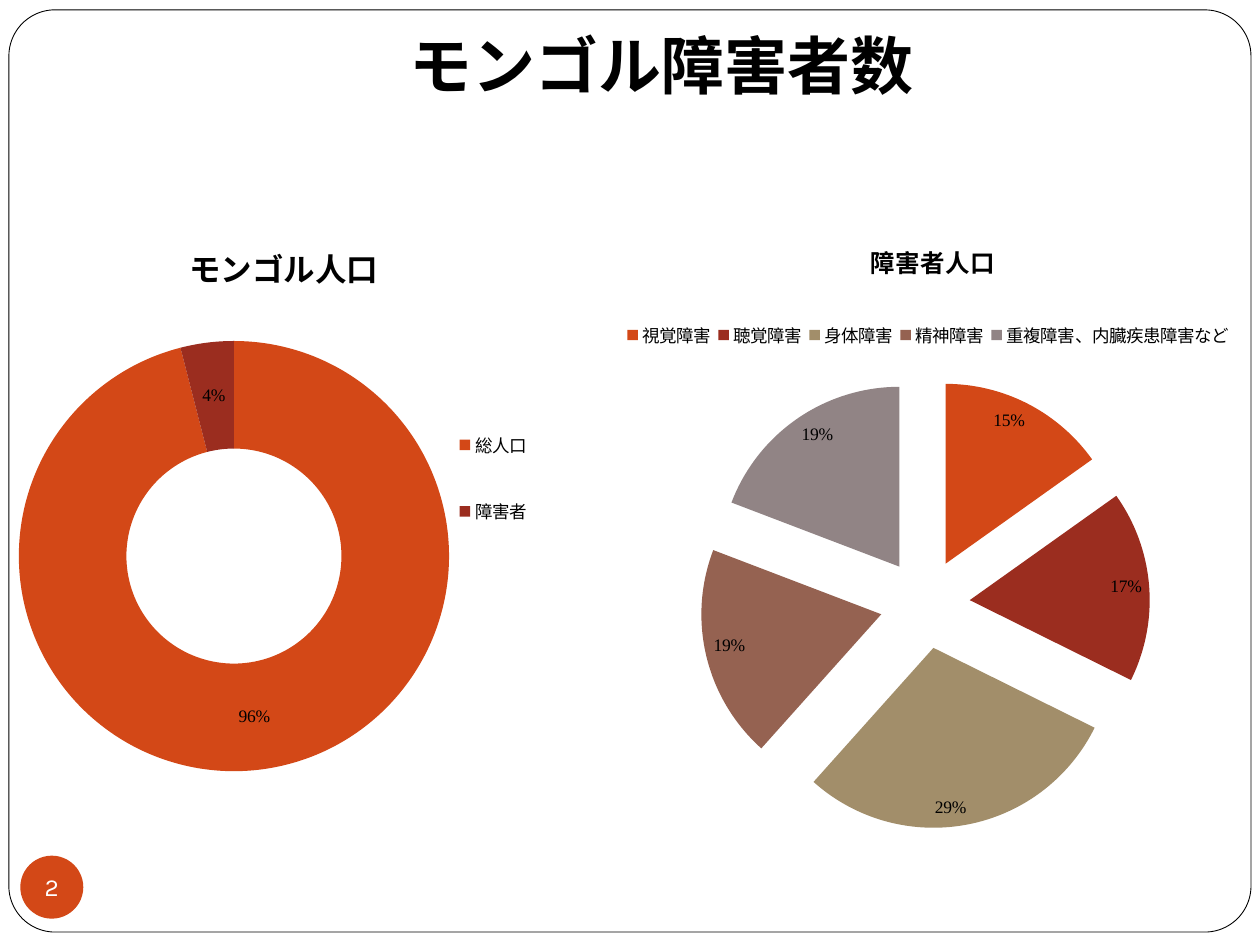
"""Build the slide on the number of people with disabilities in Mongolia."""
from lxml import etree
from pptx import Presentation
from pptx import util as u
from pptx.chart.data import CategoryChartData
from pptx.dml.color import RGBColor
from pptx.enum import chart as charts, shapes, text
from pptx.oxml.ns import qn


def color(value):
    return RGBColor.from_string(value)


def place(element, index, **fractions):
    for old in element.findall(qn("c:layout")):
        element.remove(old)
    layout = etree.Element(qn("c:layout"))
    manual = etree.SubElement(layout, qn("c:manualLayout"))
    if "w" in fractions and element.tag == qn("c:plotArea"):
        etree.SubElement(manual, qn("c:layoutTarget"), val="inner")
    for mode in ("xMode", "yMode"):
        etree.SubElement(manual, qn(f"c:{mode}"), val="edge")
    for name, value in fractions.items():
        etree.SubElement(manual, qn(f"c:{name}"), val=str(value))
    element.insert(index, layout)


presentation = Presentation()
presentation.slide_width = u.Cm(25.4)
presentation.slide_height = u.Cm(19.05)
slide = presentation.slides.add_slide(presentation.slide_layouts[5])

frame = slide.shapes.add_shape(
    shapes.MSO_SHAPE.ROUNDED_RECTANGLE, u.Cm(0.18), u.Cm(0.2), u.Cm(25.04), u.Cm(18.59))
frame.adjustments[0] = 0.05
frame.shadow.inherit = False
frame.fill.solid()
frame.fill.fore_color.rgb = color("FFFFFF")
frame.line.color.rgb = color("000000")
frame.line.width = u.Pt(0.5)
slide.shapes._spTree.insert(2, frame._element)

title = slide.shapes.title
title.left, title.top, title.width, title.height = u.Cm(2.54), u.Cm(0.76), u.Cm(21.59), u.Cm(3.18)
title.text_frame.text = "モンゴル障害者数"
title.text_frame.vertical_anchor = text.MSO_ANCHOR.TOP
title.text_frame.margin_top = 0
paragraph = title.text_frame.paragraphs[0]
paragraph.alignment = text.PP_ALIGN.CENTER
paragraph.line_spacing = 0.85
paragraph.font.name = "Karla"
paragraph.font.size = u.Pt(36)
paragraph.font.bold = True
paragraph.font.color.rgb = color("000000")

palette = ["D34817", "9B2D1F", "A28E6A", "956251", "918485"]
chart_specs = [
    dict(kind=charts.XL_CHART_TYPE.DOUGHNUT, name="モンゴル人口", size=18,
         box=(0, 4.11, 11.23, 12.57), values={"総人口": 96, "障害者": 4},
         legend=charts.XL_LEGEND_POSITION.RIGHT,
         title_at=dict(x=0.33, y=0.05),
         legend_at=dict(x=0.81, y=0.3, w=0.15, h=0.28),
         plot_at=dict(x=0.03, y=0.22, w=0.78, h=0.69)),
    dict(kind=charts.XL_CHART_TYPE.PIE, name="障害者人口", size=14,
         box=(12.5, 4.11, 12.42, 12.9),
         values={"視覚障害": 15, "聴覚障害": 17, "身体障害": 29, "精神障害": 19,
                 "重複障害、内臓疾患障害など": 19},
         legend=charts.XL_LEGEND_POSITION.TOP,
         title_at=dict(x=0.4, y=0.05),
         legend_at=dict(x=0.0, y=0.18, w=1.0, h=0.05),
         plot_at=dict(x=0.13, y=0.27, w=0.73, h=0.71)),
]
for spec in chart_specs:
    data = CategoryChartData()
    data.categories = list(spec["values"])
    data.add_series(spec["name"], list(spec["values"].values()))
    chart = slide.shapes.add_chart(spec["kind"], *map(u.Cm, spec["box"]), data).chart
    chart.font.name = "Times New Roman"
    chart.font.size = u.Pt(10)
    chart.font.color.rgb = color("000000")

    chart.has_title = True
    chart.chart_title.text_frame.text = spec["name"]
    font = chart.chart_title.text_frame.paragraphs[0].font
    font.name = "Times New Roman"
    font.size = u.Pt(spec["size"])
    font.bold = True
    font.color.rgb = color("000000")
    chart.has_legend = True
    chart.legend.position = spec["legend"]
    chart.legend.include_in_layout = False
    place(chart.chart_title._element, 1, **spec["title_at"])
    place(chart.legend._element, 1, **spec["legend_at"])
    place(chart._chartSpace.chart.plotArea, 0, **spec["plot_at"])

    plot = chart.plots[0]
    plot.vary_by_categories = True
    plot.has_data_labels = True
    labels = plot.data_labels
    labels.show_percentage = True
    labels.show_value = False
    labels.number_format = "0%"
    labels.number_format_is_linked = False
    series = plot.series[0]
    for index in range(len(spec["values"])):
        point_format = series.points[index].format
        point_format.fill.solid()
        point_format.fill.fore_color.rgb = color(palette[index])
    if spec["kind"] == charts.XL_CHART_TYPE.PIE:
        labels.position = charts.XL_LABEL_POSITION.INSIDE_END
        explosion = etree.Element(qn("c:explosion"), val="25")
        series._element.find(qn("c:dPt")).addprevious(explosion)

badge = slide.shapes.add_shape(
    shapes.MSO_SHAPE.OVAL, u.Cm(0.41), u.Cm(17.25), u.Cm(1.27), u.Cm(1.27))
badge.shadow.inherit = False
badge.fill.solid()
badge.fill.fore_color.rgb = color("D34817")
badge.line.fill.background()
badge_text = badge.text_frame
badge_text.text = "2"
badge_text.word_wrap = False
badge_text.vertical_anchor = text.MSO_ANCHOR.MIDDLE
badge_text.margin_left = badge_text.margin_right = 0
badge_text.margin_top = badge_text.margin_bottom = 0
paragraph = badge_text.paragraphs[0]
paragraph.alignment = text.PP_ALIGN.CENTER
paragraph.font.name = "Karla"
paragraph.font.size = u.Pt(14)
paragraph.font.color.rgb = color("FFFFFF")

presentation.save("out.pptx")
